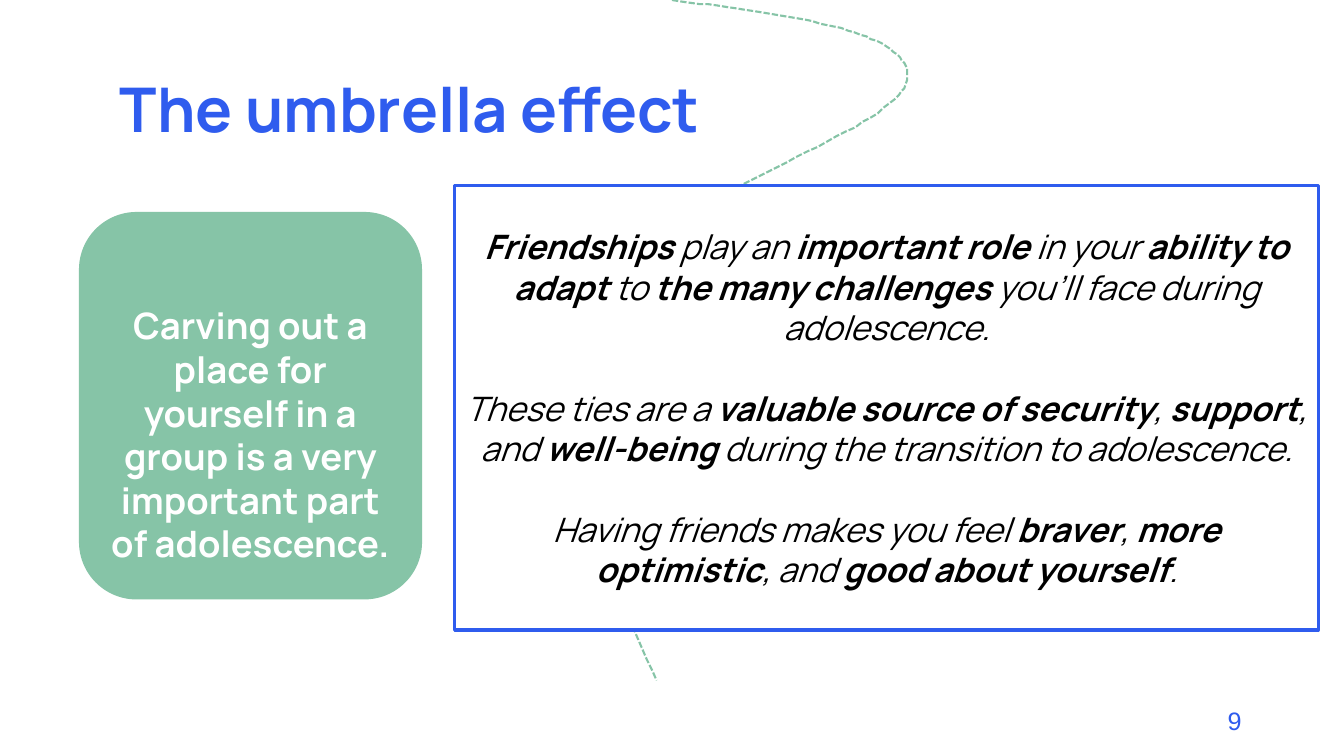
from pptx import Presentation
from pptx.dml.color import RGBColor
from pptx.enum.dml import MSO_LINE
from pptx.enum.shapes import MSO_SHAPE
from pptx.enum.text import MSO_ANCHOR, MSO_AUTO_SIZE, PP_ALIGN
from pptx.util import Pt

BLUE, GREEN, WHITE, BLACK = "2F5CEE", "86C4A7", "FFFFFF", "000000"

# Cubic Bézier control points, in points; each segment starts where the last ended
CURVE_START = (479.5, 0)
CURVE_SEGMENTS = [
    [(568.8, 11.5), (658.1, 23), (647.3, 59.8)],
    [(636.5, 96.5), (444.2, 150.5), (414, 221)],
    [(384.5, 292.3), (426.2, 388.8), (468.7, 486)],
]

# Bold passages stand between asterisks
MESSAGES = [
    "*Friendships *play an *important role *in your *ability to adapt *to "
    "*the many challenges *you’ll face during adolescence.",
    "These ties are a *valuable source of security*, *support*, and "
    "*well-being* during the transition to adolescence.",
    "Having friends makes you feel *braver*, *more optimistic*, and "
    "*good about yourself*.",
]


def color(hex_value):
    return RGBColor.from_string(hex_value)


def place(shape, left, top, width, height):
    shape.left, shape.top = Pt(left), Pt(top)
    shape.width, shape.height = Pt(width), Pt(height)


def add_run(paragraph, text, size, hex_value, name="Manrope", bold=False, italic=False):
    run = paragraph.add_run()
    run.text = text
    font = run.font
    font.name, font.size, font.bold, font.italic = name, Pt(size), bold, italic
    font.color.rgb = color(hex_value)


def add_panel(slide, kind, bounds, fill, line, line_width):
    panel = slide.shapes.add_shape(kind, *map(Pt, bounds))
    panel.shadow.inherit = False
    panel.fill.solid()
    panel.fill.fore_color.rgb = color(fill)
    panel.line.color.rgb = color(line)
    panel.line.width = Pt(line_width)
    return panel


def add_label(slide, bounds, text, size, hex_value, alignment, **style):
    frame = slide.shapes.add_textbox(*map(Pt, bounds)).text_frame
    frame.word_wrap = True
    paragraph = frame.paragraphs[0]
    paragraph.alignment = alignment
    add_run(paragraph, text, size, hex_value, **style)


def set_title(slide, text):
    title = slide.shapes.title
    place(title, 78.5, 28, 828, 104.4)
    frame = title.text_frame
    frame.auto_size = MSO_AUTO_SIZE.NONE
    frame.vertical_anchor = MSO_ANCHOR.MIDDLE
    paragraph = frame.paragraphs[0]
    paragraph.alignment = PP_ALIGN.LEFT
    paragraph.line_spacing = 0.9
    add_run(paragraph, text, 44, BLUE, bold=True)


def curve_points(start, segments, steps=40):
    points = []
    for first, second, end in segments:
        for step in range(1, steps + 1):
            t = step / steps
            u = 1 - t
            points.append(tuple(
                u**3 * a + 3 * u**2 * t * b + 3 * u * t**2 * c + t**3 * d
                for a, b, c, d in zip(start, first, second, end)))
        start = end
    return points


def add_dashed_curve(slide):
    builder = slide.shapes.build_freeform(*CURVE_START, scale=Pt(1))
    builder.add_line_segments(curve_points(CURVE_START, CURVE_SEGMENTS), close=False)
    curve = builder.convert_to_shape()
    curve.shadow.inherit = False
    curve.fill.background()
    curve.line.color.rgb = color(GREEN)
    curve.line.width = Pt(1.5)
    curve.line.dash_style = MSO_LINE.SQUARE_DOT


def fill_messages(panel):
    frame = panel.text_frame
    frame.word_wrap = True
    frame.vertical_anchor = MSO_ANCHOR.MIDDLE
    for index, message in enumerate(MESSAGES):
        paragraph = frame.add_paragraph() if index else frame.paragraphs[0]
        paragraph.alignment = PP_ALIGN.CENTER
        if index:
            paragraph.space_before = Pt(28.8)
        for part, text in enumerate(message.split("*")):
            if text:
                add_run(paragraph, text, 24, BLACK, bold=part % 2 == 1, italic=True)


def main():
    presentation = Presentation()
    presentation.slide_width, presentation.slide_height = Pt(960), Pt(540)
    slide = presentation.slides.add_slide(presentation.slide_layouts[5])

    # Page number and title
    add_label(slide, (678, 500.4, 216, 28.8), "9", 18, BLUE, PP_ALIGN.RIGHT, name="Arial")
    set_title(slide, "The umbrella effect")

    # Dashed curve behind the panels
    add_dashed_curve(slide)

    # Green card with its statement
    add_panel(slide, MSO_SHAPE.ROUNDED_RECTANGLE, (56.9, 151.9, 244.1, 275.8), GREEN, GREEN, 1)
    add_label(slide, (69.1, 213.1, 219.6, 164.9),
              "Carving out a place for yourself in a group is a very important part of adolescence.",
              26, WHITE, PP_ALIGN.CENTER, bold=True)

    # Framed messages
    fill_messages(add_panel(slide, MSO_SHAPE.RECTANGLE, (324.7, 132.5, 617, 317.5),
                            WHITE, BLUE, 2.25))

    presentation.save("out.pptx")


if __name__ == "__main__":
    main()
